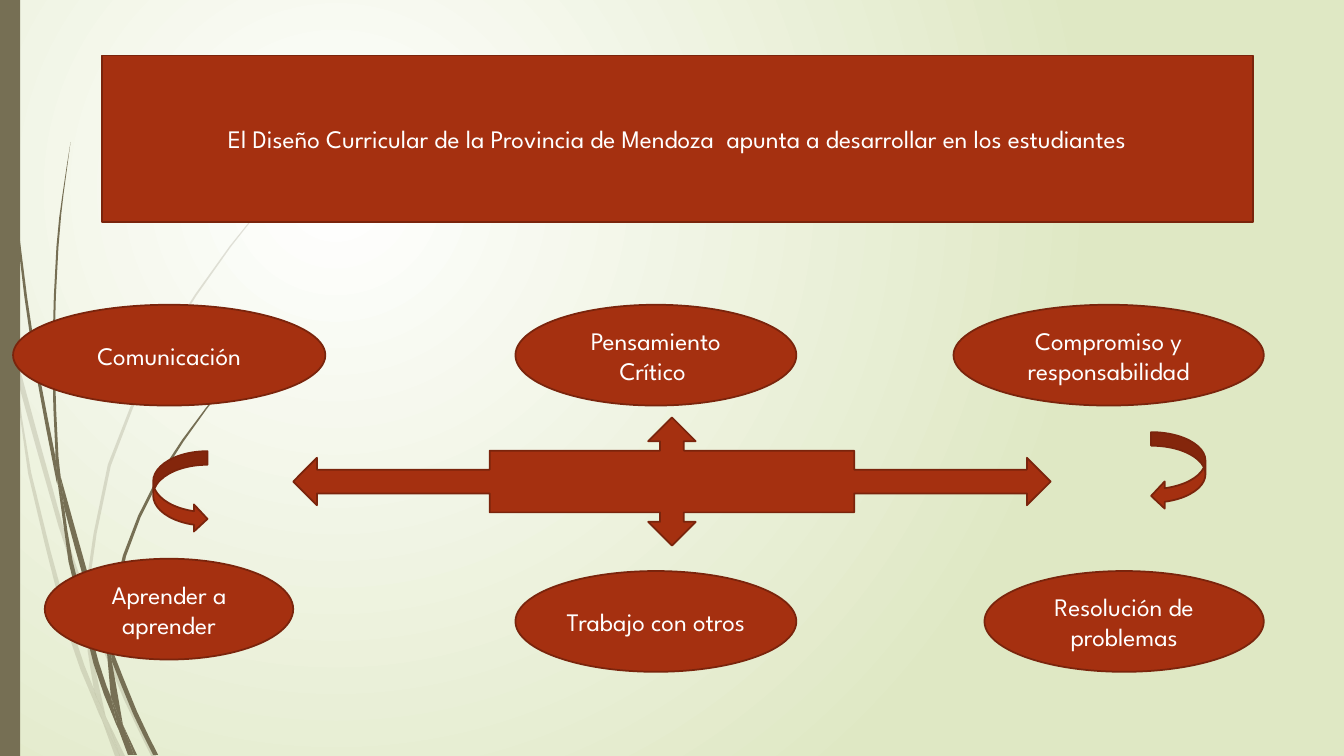
from dataclasses import dataclass

from lxml import etree
from pptx import Presentation
from pptx.dml.color import RGBColor
from pptx.enum.shapes import MSO_SHAPE
from pptx.enum.text import MSO_ANCHOR, PP_ALIGN
from pptx.oxml.ns import qn
from pptx.util import Cm, Pt

RECTANGLE = MSO_SHAPE.RECTANGLE
ELLIPSE = MSO_SHAPE.OVAL
FOUR_WAY_CALLOUT = MSO_SHAPE.QUAD_ARROW_CALLOUT
CURVED_RIGHT = MSO_SHAPE.CURVED_RIGHT_ARROW
CURVED_LEFT = MSO_SHAPE.CURVED_LEFT_ARROW
CENTER = PP_ALIGN.CENTER
MIDDLE = MSO_ANCHOR.MIDDLE
TITLE_ONLY = 5


@dataclass(frozen=True)
class Theme:
    font: str = "League Spartan"
    text_size: Pt = Pt(18)
    line_width: Pt = Pt(1.25)
    text: RGBColor = RGBColor(0xFF, 0xFF, 0xFF)
    accent: RGBColor = RGBColor(0xA5, 0x30, 0x10)
    outline: RGBColor = RGBColor(0x7A, 0x24, 0x0C)
    grass: RGBColor = RGBColor(0x76, 0x6F, 0x54)
    glow: RGBColor = RGBColor(0xFF, 0xFF, 0xFF)
    meadow: RGBColor = RGBColor(0xDF, 0xE8, 0xC4)


THEME = Theme()
WIDTH, HEIGHT = 33.87, 19.05
GRASS_UNIT = 0.0254
CURVE_STEPS = 2
FAINT_ALPHA = 20
FIRST_GRASS_ID = 100

HEADING = "El Diseño Curricular de la Provincia de Mendoza  apunta a desarrollar en los estudiantes"
CAPACITIES = [
    ("Comunicación", 0.33, 7.68, 7.87),
    ("Pensamiento Crítico ", 12.99, 7.68, 7.08),
    ("Compromiso y responsabilidad", 24.03, 7.68, 7.82),
    ("Aprender a aprender", 1.13, 14.08, 6.26),
    ("Trabajo con otros", 12.99, 14.39, 7.08),
    ("Resolución de problemas", 24.81, 14.39, 7.04),
]
CAPACITY_HEIGHT = 2.54
ARROWS = [
    (FOUR_WAY_CALLOUT, 7.39, 10.52, 19.09, 3.23),
    (CURVED_RIGHT, 3.86, 11.37, 1.37, 2.05),
    (CURVED_LEFT, 29.01, 10.89, 1.37, 1.95),
]

FAINT_BLADES = [
    ([(11, 350), (9, 322), (0, 282)], [(0, 299), (10, 344)]),
    ([(14, 345), (62, 520), (85, 586)], [(84, 599), (58, 522), (17, 376)]),
    ([(88, 596), (92, 607), (127, 692), (155, 750)], [(150, 750), (123, 694), (88, 610)]),
    ([(105, 711), (124, 750)], [(119, 750)]),
    ([(11, 350), (17, 376), (31, 469), (70, 619), (93, 683)],
     [(99, 707), (101, 714), (92, 693), (65, 621), (28, 470)]),
    ([(84, 599), (88, 608), (91, 646), (105, 711)], [(96, 692), (93, 683), (87, 646)]),
    ([(88, 596), (88, 584), (110, 462), (160, 349), (229, 245), (268, 198), (290, 175), (312, 154)],
     [(312, 153), (289, 175), (268, 197), (228, 244), (158, 348), (107, 461), (85, 584), (85, 586)]),
    ([(101, 714), (119, 750)], [(114, 750)]),
    ([(85, 586), (88, 596), (88, 610)], [(84, 599)]),
    ([(93, 683), (96, 692), (105, 711), (119, 750)], [(101, 714), (99, 707)]),
]
FULL_BLADES = [
    ([(4, 0), (5, 48), (8, 109), (19, 232), (36, 355), (55, 453), (57, 481)],
     [(56, 477), (33, 355), (17, 233), (7, 110), (4, 48), (3, 0)]),
    ([(60, 472), (93, 590), (106, 631)], [(106, 645), (88, 592), (64, 505)]),
    ([(110, 641), (136, 706), (157, 749)], [(152, 749), (132, 708), (111, 656)]),
    ([(57, 477), (64, 505), (72, 556), (98, 657), (110, 691)],
     [(116, 717), (117, 722), (111, 708), (93, 659), (68, 557)]),
    ([(70, 141), (62, 193), (56, 245), (52, 349), (55, 449), (60, 472)],
     [(58, 453), (54, 349), (58, 245), (63, 193)]),
    ([(122, 719), (136, 749)], [(133, 749)]),
    ([(55, 449), (60, 472), (64, 505)], [(57, 477), (55, 453)]),
    ([(111, 633), (125, 552), (158, 476), (205, 406), (231, 374), (245, 359), (261, 344)],
     [(260, 344), (245, 358), (231, 373), (204, 405), (156, 474), (122, 551), (106, 631), (110, 641)]),
    ([(117, 722), (131, 749)], [(127, 749)]),
    ([(106, 645), (109, 651), (111, 656), (122, 719)], [(116, 706), (110, 691)]),
    ([(106, 631), (110, 641), (111, 656)], [(109, 651), (106, 645)]),
    ([(110, 691), (116, 706), (122, 719), (133, 749)], [(130, 749), (117, 722), (116, 717)]),
]


def paint_background(slide):
    fill = slide.background.fill
    fill.gradient()
    for stop, color in zip(fill.gradient_stops, (THEME.glow, THEME.meadow)):
        stop.color.rgb = color
    gradient = slide.element.find(".//" + qn("a:gradFill"))
    gradient.remove(gradient.find(qn("a:lin")))
    circle = etree.SubElement(gradient, qn("a:path"), path="circle")
    etree.SubElement(circle, qn("a:fillToRect"), l="50000", t="50000", r="100000", b="100000")


def smooth_edge(anchors):
    if len(anchors) < 3:
        return anchors
    padded = [anchors[0], *anchors, anchors[-1]]
    points = [anchors[0]]
    for before, start, end, after in zip(padded, padded[1:], padded[2:], padded[3:]):
        for step in range(1, CURVE_STEPS + 1):
            t = step / CURVE_STEPS
            points.append(tuple(
                b + ((c - a) * t + (2 * a - 5 * b + 4 * c - d) * t**2
                     + (3 * b - a - 3 * c + d) * t**3) / 2
                for a, b, c, d in zip(before, start, end, after)
            ))
    return points


def paint_grass(part):
    part.shadow.inherit = False
    part.fill.solid()
    part.fill.fore_color.rgb = THEME.grass
    part.line.fill.background()


def add_blade(tuft, outward, back, alpha):
    outline = [
        (Cm(x * GRASS_UNIT), Cm(y * GRASS_UNIT))
        for x, y in smooth_edge(outward) + smooth_edge(back)
    ]
    builder = tuft.shapes.build_freeform(*outline[0], scale=1.0)
    builder.add_line_segments(outline[1:], close=True)
    blade = builder.convert_to_shape()
    paint_grass(blade)
    if alpha < 100:
        color = blade.element.spPr.find(".//" + qn("a:srgbClr"))
        etree.SubElement(color, qn("a:alpha"), val=str(alpha * 1000))


def add_grass(slide):
    scenery = []
    for blades, alpha in ((FAINT_BLADES, FAINT_ALPHA), (FULL_BLADES, 100)):
        tuft = slide.shapes.add_group_shape()
        for outward, back in blades:
            add_blade(tuft, outward, back, alpha)
        scenery.append(tuft)
    edge = slide.shapes.add_shape(RECTANGLE, 0, 0, Cm(0.51), Cm(HEIGHT))
    paint_grass(edge)
    scenery.append(edge)
    move_to_layout(slide.slide_layout, scenery)


def move_to_layout(layout, scenery):
    tree = layout.element.find(".//" + qn("p:spTree"))
    next_id = FIRST_GRASS_ID
    for part in scenery:
        tree.append(part.element)
        for properties in part.element.iter(qn("p:cNvPr")):
            properties.set("id", str(next_id))
            next_id += 1


def paint_accent(part):
    part.fill.solid()
    part.fill.fore_color.rgb = THEME.accent
    part.line.color.rgb = THEME.outline
    part.line.width = THEME.line_width


def write_label(part, wording):
    frame = part.text_frame
    frame.word_wrap = True
    frame.vertical_anchor = MIDDLE
    paragraph = frame.paragraphs[0]
    paragraph.alignment = CENTER
    run = paragraph.add_run()
    run.text = wording
    run.font.name = THEME.font
    run.font.size = THEME.text_size
    run.font.color.rgb = THEME.text


def place_heading(slide):
    heading = slide.shapes.title
    heading.left, heading.top = Cm(2.57), Cm(1.4)
    heading.width, heading.height = Cm(29), Cm(4.19)
    paint_accent(heading)
    write_label(heading, HEADING)


def add_accent_shape(slide, preset, *box):
    part = slide.shapes.add_shape(preset, *map(Cm, box))
    part.shadow.inherit = False
    paint_accent(part)
    return part


def main():
    deck = Presentation()
    deck.slide_width, deck.slide_height = Cm(WIDTH), Cm(HEIGHT)
    slide = deck.slides.add_slide(deck.slide_layouts[TITLE_ONLY])
    paint_background(slide)
    add_grass(slide)
    place_heading(slide)
    for wording, left, top, width in CAPACITIES:
        capacity = add_accent_shape(slide, ELLIPSE, left, top, width, CAPACITY_HEIGHT)
        write_label(capacity, wording)
    for preset, *box in ARROWS:
        add_accent_shape(slide, preset, *box)
    deck.save("out.pptx")


if __name__ == "__main__":
    main()
